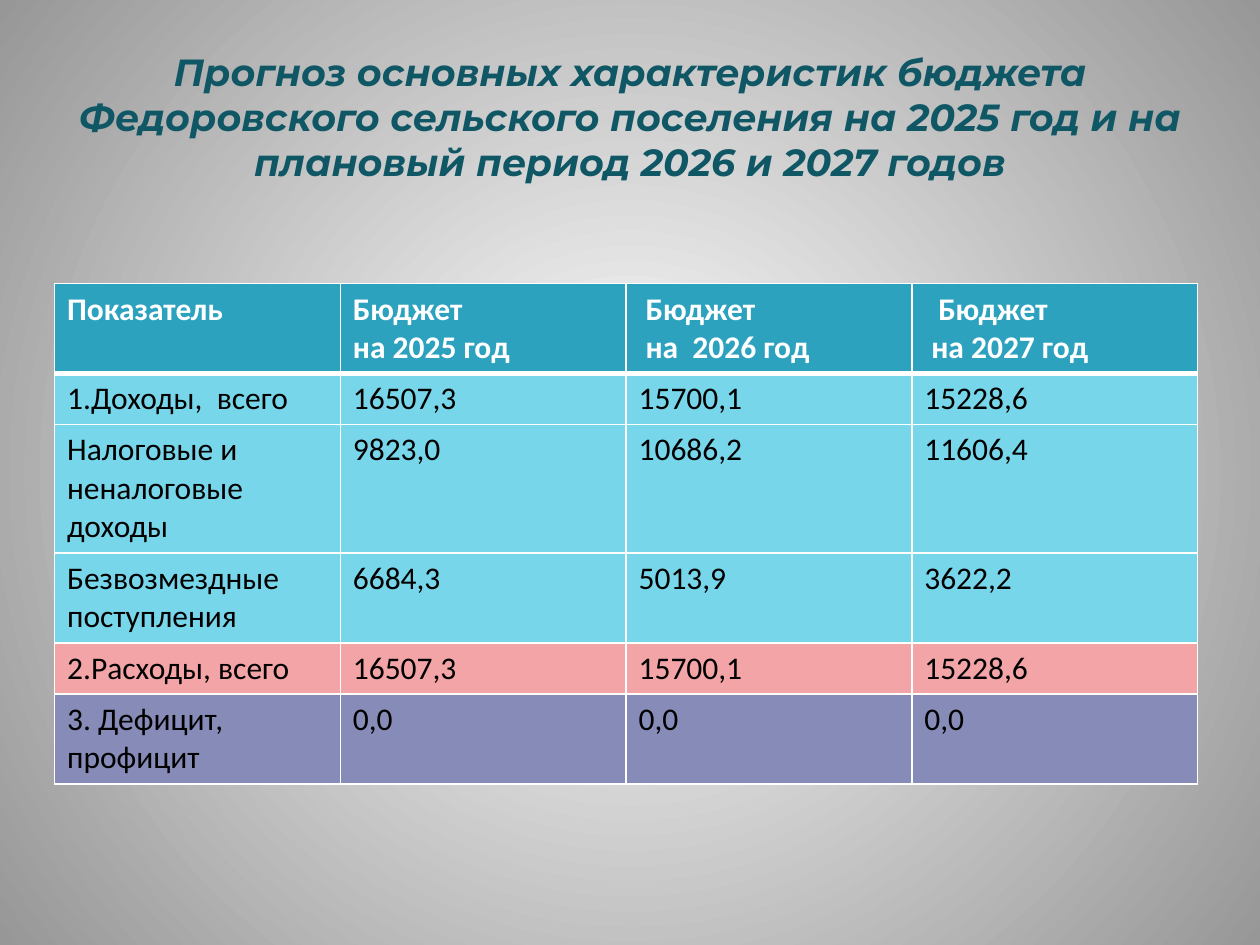
from dataclasses import dataclass

from pptx import Presentation
from pptx.dml.color import RGBColor
from pptx.enum.text import MSO_ANCHOR, PP_ALIGN
from pptx.oxml.ns import qn
from pptx.oxml.xmlchemy import OxmlElement
from pptx.util import Cm, Pt

MIDDLE = MSO_ANCHOR.MIDDLE
CENTER = PP_ALIGN.CENTER
BLANK_LAYOUT = 6


@dataclass(frozen=True)
class Theme:
    title_font: str = "Montserrat"
    body_font: str = "Calibri"
    title_size: float = 21.6
    body_size: float = 18
    title: str = "105766"
    header: str = "2DA2BF"
    income: str = "78D6EA"
    expense: str = "F2A4A7"
    balance: str = "878BB8"
    white: str = "FFFFFF"
    black: str = "000000"
    edge: str = "979797"
    border: float = 1
    header_border: float = 3


THEME = Theme()

TITLE = ("Прогноз основных характеристик бюджета Федоровского сельского "
         "поселения на 2025 год и на плановый период 2026 и 2027 годов")

# Each header line: text and left indent in cm
HEADERS = [
    [("Показатель", 0)],
    [("Бюджет", 0), ("на 2025 год", 0)],
    [("Бюджет", 0.14), ("на  2026 год", 0.14)],
    [("Бюджет", 0.28), ("на 2027 год", 0.14)],
]
# Label, values by year, fill, number of text lines
ROWS = [
    ("1.Доходы,  всего", ("16507,3", "15700,1", "15228,6"), THEME.income, 1),
    ("Налоговые и неналоговые доходы", ("9823,0", "10686,2", "11606,4"), THEME.income, 3),
    ("Безвозмездные поступления", ("6684,3", "5013,9", "3622,2"), THEME.income, 2),
    ("2.Расходы, всего", ("16507,3", "15700,1", "15228,6"), THEME.expense, 1),
    ("3. Дефицит, профицит", ("0,0", "0,0", "0,0"), THEME.balance, 2),
]
HEADER_LINES = 2
LINE_HEIGHT = 0.78
ROW_PADDING = 0.25


def color(value):
    return RGBColor.from_string(value)


def add_run(paragraph, text, font, size, fill, bold=False, italic=False):
    run = paragraph.add_run()
    run.text = text
    run.font.name = font
    run.font.size = Pt(size)
    run.font.color.rgb = color(fill)
    run.font.bold = bold
    run.font.italic = italic


def set_background(slide):
    """Fill the slide with a gradient that runs from the centre outwards."""
    fill = slide.background.fill
    fill.gradient()
    for stop, value, position in zip(fill.gradient_stops, (THEME.white, THEME.edge), (0, 1)):
        stop.color.rgb = color(value)
        stop.position = position
    gradient = next(slide.element.iter(qn("a:gradFill")))
    radial = OxmlElement("a:path")
    radial.set("path", "circle")
    center = OxmlElement("a:fillToRect")
    for side in "ltrb":
        center.set(side, "50000")
    radial.append(center)
    gradient.replace(gradient.find(qn("a:lin")), radial)


def add_title(slide, left, top, width, height):
    frame = slide.shapes.add_textbox(Cm(left), Cm(top), Cm(width), Cm(height)).text_frame
    frame.word_wrap = True
    frame.vertical_anchor = MIDDLE
    paragraph = frame.paragraphs[0]
    paragraph.alignment = CENTER
    add_run(paragraph, TITLE, THEME.title_font, THEME.title_size, THEME.title, True, True)


def set_borders(cell, top, bottom):
    properties = cell._tc.get_or_add_tcPr()
    widths = {"L": THEME.border, "R": THEME.border, "T": top, "B": bottom}
    for index, (side, width) in enumerate(widths.items()):
        line = OxmlElement(f"a:ln{side}")
        line.set("w", str(Pt(width)))
        solid = OxmlElement("a:solidFill")
        line_color = OxmlElement("a:srgbClr")
        line_color.set("val", THEME.white)
        solid.append(line_color)
        line.append(solid)
        properties.insert(index, line)


def fill_cell(cell, lines, fill, text_color, bold=False, top=THEME.border, bottom=THEME.border):
    cell.fill.solid()
    cell.fill.fore_color.rgb = color(fill)
    set_borders(cell, top, bottom)
    frame = cell.text_frame
    for index, (text, indent) in enumerate(lines):
        paragraph = frame.add_paragraph() if index else frame.paragraphs[0]
        if indent:
            paragraph._p.get_or_add_pPr().set("marL", str(Cm(indent)))
        add_run(paragraph, text, THEME.body_font, THEME.body_size, text_color, bold)


def add_budget_table(slide, left, top, width):
    line_counts = [HEADER_LINES] + [row[-1] for row in ROWS]
    heights = [ROW_PADDING + LINE_HEIGHT * count for count in line_counts]
    table = slide.shapes.add_table(len(heights), len(HEADERS), Cm(left), Cm(top),
                                   Cm(width), Cm(sum(heights))).table
    for column in table.columns:
        column.width = Cm(width / len(HEADERS))
    for row, height in zip(table.rows, heights):
        row.height = Cm(height)

    for column, lines in enumerate(HEADERS):
        fill_cell(table.cell(0, column), lines, THEME.header, THEME.white, True,
                  bottom=THEME.header_border)
    for row, (label, values, fill, _) in enumerate(ROWS, start=1):
        top_border = THEME.header_border if row == 1 else THEME.border
        for column, text in enumerate((label, *values)):
            fill_cell(table.cell(row, column), [(text, 0)], fill, THEME.black, top=top_border)


def main():
    presentation = Presentation()
    presentation.slide_width = Cm(25.4)
    presentation.slide_height = Cm(19.05)
    slide = presentation.slides.add_slide(presentation.slide_layouts[BLANK_LAYOUT])
    set_background(slide)
    add_title(slide, 1.27, 0.76, 22.86, 3.18)
    add_budget_table(slide, 1.1, 5.72, 23.04)
    presentation.save("out.pptx")


if __name__ == "__main__":
    main()
